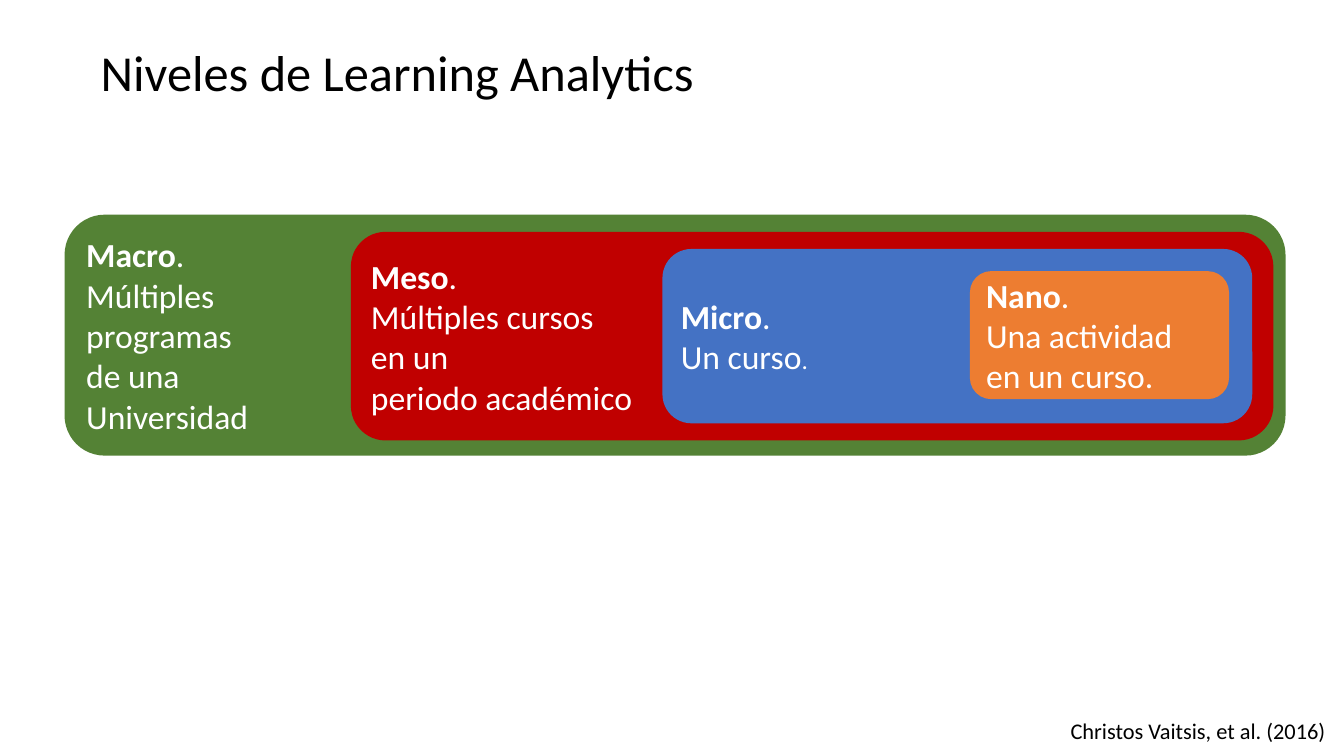
from dataclasses import dataclass

from pptx import Presentation
from pptx.dml.color import RGBColor
from pptx.enum.shapes import MSO_SHAPE
from pptx.enum.text import MSO_ANCHOR, MSO_AUTO_SIZE, PP_ALIGN
from pptx.util import Inches, Pt

ROUNDED = MSO_SHAPE.ROUNDED_RECTANGLE
MIDDLE = MSO_ANCHOR.MIDDLE
LEFT = PP_ALIGN.LEFT
FIT_SHAPE = MSO_AUTO_SIZE.SHAPE_TO_FIT_TEXT


@dataclass(frozen=True)
class Theme:
    font: str = "Calibri"
    title_size: int = 36
    level_size: int = 24
    small_size: int = 18
    source_size: int = 16
    text: str = "000000"
    level_text: str = "FFFFFF"
    macro: str = "548235"
    meso: str = "C00000"
    micro: str = "4472C4"
    nano: str = "ED7D31"


THEME = Theme()


def add_run(paragraph, text, size, color, bold=False):
    run = paragraph.add_run()
    run.text = text
    run.font.name = THEME.font
    run.font.size = Pt(size)
    run.font.bold = bold
    run.font.color.rgb = RGBColor.from_string(color)


presentation = Presentation()
presentation.slide_width = Inches(13.33)
presentation.slide_height = Inches(7.5)
slide = presentation.slides.add_slide(presentation.slide_layouts[6])

# Nested levels, from the outermost to the innermost
levels = [
    ("Macro", THEME.macro, (0.64, 2.13, 12.11, 2.39),
     [[("Múltiples", THEME.level_size)], [("programas", THEME.level_size)],
      [("de una", THEME.level_size)], [("Universidad", THEME.level_size)]]),
    ("Meso", THEME.meso, (3.48, 2.3, 9.15, 2.07),
     [[("Múltiples cursos", THEME.level_size)], [("en un", THEME.level_size)],
      [("periodo académico", THEME.level_size)]]),
    ("Micro", THEME.micro, (6.57, 2.47, 5.85, 1.73),
     [[("Un curso", THEME.level_size), (".", THEME.small_size)]]),
    ("Nano", THEME.nano, (9.62, 2.69, 2.57, 1.27),
     [[("Una actividad en un curso.", THEME.level_size)]]),
]
for name, fill, box, lines in levels:
    shape = slide.shapes.add_shape(ROUNDED, *map(Inches, box))
    shape.shadow.inherit = False
    shape.fill.solid()
    shape.fill.fore_color.rgb = RGBColor.from_string(fill)
    shape.line.fill.background()
    frame = shape.text_frame
    frame.word_wrap = True
    frame.vertical_anchor = MIDDLE
    heading = frame.paragraphs[0]
    heading.alignment = LEFT
    add_run(heading, name, THEME.level_size, THEME.level_text, bold=True)
    add_run(heading, ".", THEME.level_size, THEME.level_text)
    for line in lines:
        paragraph = frame.add_paragraph()
        paragraph.alignment = LEFT
        for text, size in line:
            add_run(paragraph, text, size, THEME.level_text)

# Source and title
captions = [
    ("Christos Vaitsis, et al. (2016)", THEME.source_size, (10.52, 7.07, 2.76, 0.37), False),
    ("Niveles de Learning Analytics", THEME.title_size, (0.9, 0.36, 7.65, 0.71), True),
]
for text, size, box, wrap in captions:
    frame = slide.shapes.add_textbox(*map(Inches, box)).text_frame
    frame.word_wrap = wrap
    frame.auto_size = FIT_SHAPE
    add_run(frame.paragraphs[0], text, size, THEME.text)

presentation.save("out.pptx")
